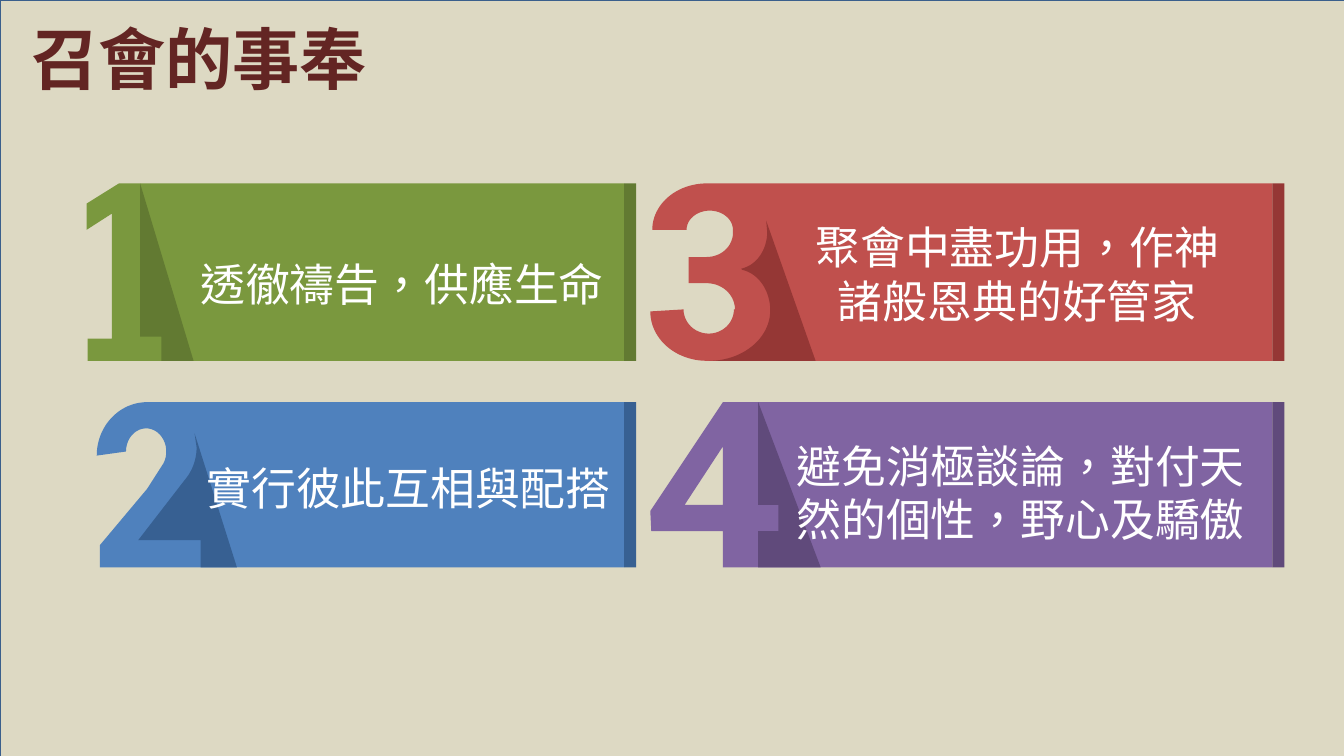
from dataclasses import dataclass
from math import cos, radians, sin

from lxml.etree import SubElement
from pptx import Presentation
from pptx.dml.color import RGBColor
from pptx.enum.lang import MSO_LANGUAGE_ID
from pptx.enum.shapes import MSO_SHAPE
from pptx.enum.text import MSO_AUTO_SIZE, PP_ALIGN
from pptx.oxml.ns import qn
from pptx.shapes.base import BaseShape
from pptx.slide import Slide
from pptx.util import Cm, Length, Pt

COLORS = {
    "paper": "DDD9C3", "border": "3A5F8C", "title": "632523", "white": "FFFFFF",
    "green": "7A983E", "dark green": "627A32",
    "blue": "4F81BD", "dark blue": "376092",
    "red": "C0504D", "dark red": "953735",
    "purple": "8064A2", "dark purple": "604A7B",
}
COLUMN_ENDS = (6.19, 12.62)
ROW_TOPS = (1.82, 3.99)
ROW_BOTTOMS = (3.58, 5.63)
EDGE_WIDTH = 0.12
ARC_STEPS = 24

Frame = tuple[float, float, float, float]
Point = tuple[float, float]


@dataclass
class Arc:
    x: float
    y: float
    width_radius: float
    height_radius: float
    start: int
    end: int

    def points(self) -> list[Point]:
        turn = (self.end - self.start) / ARC_STEPS
        angles = [radians(self.start + turn * step) for step in range(ARC_STEPS + 1)]
        return [(self.x + self.width_radius * cos(angle),
                 self.y + self.height_radius * sin(angle)) for angle in angles]


Outline = list[Point | Arc]


@dataclass
class Banner:
    caption: str
    color: str
    caption_frame: Frame
    digit: Outline
    hole: Outline
    shadow: Outline


BANNERS = [
    Banner(
        "透徹禱告，供應生命", "green", (1.86, 2.5, 4.26, 0.64),
        [(1.18, 1.82), (0.86, 2.02), (0.86, 2.28), (1.11, 2.12), (1.11, 3.36),
         (0.87, 3.36), (0.87, 3.58)],
        [],
        [(1.92, 3.58), (1.39, 1.82), (1.39, 3.34), (1.6, 3.34), (1.6, 3.58)],
    ),
    Banner(
        "實行彼此互相與配搭", "blue", (1.92, 4.52, 4.26, 0.64),
        [Arc(1.46, 4.52, 0.5, 0.53, 270, 180), Arc(1.45, 4.48, 0.2, 0.23, 180, 390),
         (1.46, 4.85), (0.99, 5.41), (0.99, 5.63)],
        [],
        [(2.35, 5.63), (1.93, 4.3), Arc(1.45, 4.44, 0.5, 0.5, 0, 40),
         (1.37, 5.36), (1.99, 5.36), (1.99, 5.63)],
    ),
    Banner(
        "聚會中盡功用，作神諸般恩典的好管家", "red", (7.88, 2.13, 4.42, 1.18),
        [Arc(7.01, 2.28, 0.54, 0.46, 270, 180), Arc(7.04, 2.28, 0.23, 0.19, 180, 360),
         Arc(7.01, 2.31, 0.26, 0.24, 0, 90), (6.83, 2.55), (6.83, 2.81),
         Arc(7.01, 3.07, 0.28, 0.26, 270, 360), Arc(7.03, 3.07, 0.25, 0.24, 0, 180),
         Arc(7.01, 3.09, 0.56, 0.49, 180, 90)],
        [],
        [(7.6, 2.19), Arc(7.3, 2.3, 0.31, 0.37, 0, 80),
         Arc(7.3, 3.08, 0.34, 0.41, 280, 360), Arc(7.03, 3.08, 0.61, 0.5, 0, 90),
         (8.09, 3.58)],
    ),
    Banner(
        "避免消極談論，對付天然的個性，野心及驕傲", "purple", (7.77, 4.3, 4.71, 1.18),
        [(7.17, 3.99), (6.45, 5.07), (6.46, 5.27), (7.17, 5.27), (7.17, 5.63)],
        [(7.17, 5.01), (6.79, 5.01), (7.17, 4.43)],
        [(7.52, 3.99), (7.52, 5.01), (7.72, 5.01), (7.72, 5.27), (7.52, 5.27),
         (7.52, 5.63), (8.14, 5.63)],
    ),
]


def length(inches: float) -> Length:
    return Cm(inches * 2.54)


def color(name: str) -> RGBColor:
    return RGBColor.from_string(COLORS[name])


def paint(shape: BaseShape, fill: str) -> None:
    shape.shadow.inherit = False
    shape.fill.solid()
    shape.fill.fore_color.rgb = color(fill)
    shape.line.fill.background()


def add_rectangle(shapes, frame: Frame, fill: str) -> BaseShape:
    rectangle = shapes.add_shape(MSO_SHAPE.RECTANGLE, *map(length, frame))
    paint(rectangle, fill)
    return rectangle


def trace(outline: Outline) -> list[tuple[Length, Length]]:
    points: list[Point] = []
    for part in outline:
        points.extend(part.points() if isinstance(part, Arc) else [part])
    return [(length(x), length(y)) for x, y in points]


def add_outline(shapes, outline: Outline, hole: Outline, fill: str) -> None:
    start, *rest = trace(outline)
    builder = shapes.build_freeform(*start)
    builder.add_line_segments(rest, close=True)
    if hole:
        start, *rest = trace(hole)
        builder.move_to(*start)
        builder.add_line_segments(rest, close=True)
    paint(builder.convert_to_shape(), fill)


def add_banner(page: Slide, banner: Banner, column: int, row: int) -> None:
    shapes = page.shapes.add_group_shape().shapes
    dark = f"dark {banner.color}"
    end, top, bottom = COLUMN_ENDS[column], ROW_TOPS[row], ROW_BOTTOMS[row]
    add_outline(shapes, banner.digit + [(end, bottom), (end, top)], banner.hole, banner.color)
    add_outline(shapes, banner.shadow, [], dark)
    add_rectangle(shapes, (end, top, EDGE_WIDTH, bottom - top), dark)


def add_text(page: Slide, text: str, frame: Frame, font: str, size: int, fill: str,
             bold: bool = False, alignment: PP_ALIGN = PP_ALIGN.CENTER) -> None:
    box = page.shapes.add_textbox(*map(length, frame))
    box.text_frame.word_wrap = True
    box.text_frame.auto_size = MSO_AUTO_SIZE.NONE if bold else MSO_AUTO_SIZE.SHAPE_TO_FIT_TEXT
    box.text_frame.text = text
    para = box.text_frame.paragraphs[0]
    para.alignment = alignment
    span = para.runs[0]
    span.font.name = font
    span.font.size = Pt(size)
    span.font.bold = bold
    span.font.color.rgb = color(fill)
    span.font.language_id = MSO_LANGUAGE_ID.TRADITIONAL_CHINESE
    SubElement(span.font._element, qn("a:ea")).set("typeface", font)


def main() -> None:
    deck = Presentation()
    deck.slide_width, deck.slide_height = length(13.33), length(7.5)
    page = deck.slides.add_slide(deck.slide_layouts[6])
    backdrop = add_rectangle(page.shapes, (0, 0, 13.42, 7.66), "paper")
    backdrop.line.color.rgb = color("border")
    backdrop.line.width = Pt(1)
    for index, banner in enumerate(BANNERS):
        add_banner(page, banner, *divmod(index, len(ROW_TOPS)))
    for banner in BANNERS:
        add_text(page, banner.caption, banner.caption_frame, "Lato", 32, "white")
    add_text(page, "召會的事奉", (0.21, 0.12, 11.97, 0.92), "Noto Sans CJK SC", 48, "title",
             bold=True, alignment=PP_ALIGN.LEFT)
    deck.save("out.pptx")


if __name__ == "__main__":
    main()
